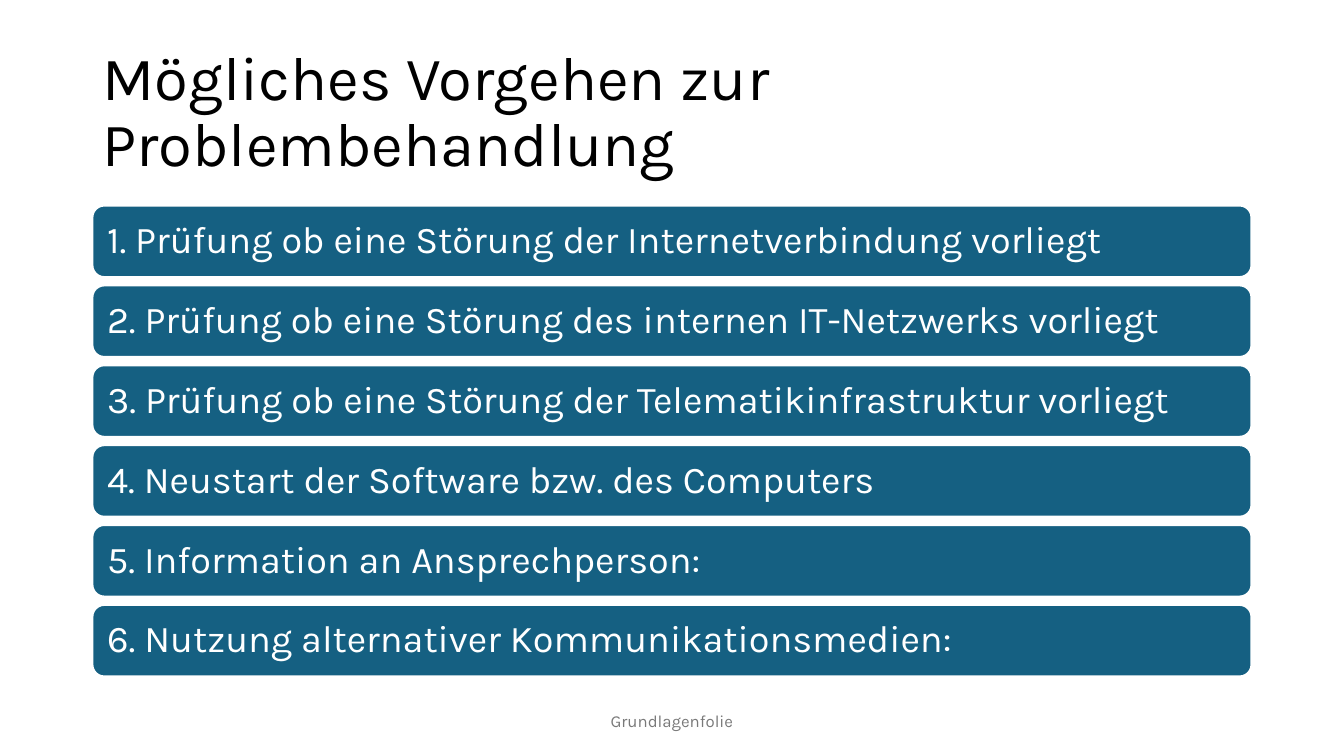
from dataclasses import dataclass

from pptx import Presentation
from pptx.dml.color import RGBColor
from pptx.enum.shapes import MSO_SHAPE as Shape
from pptx.enum.text import MSO_ANCHOR as Anchor, MSO_AUTO_SIZE as AutoSize, PP_ALIGN as Align
from pptx.util import Pt

TITLE = "Mögliches Vorgehen zur Problembehandlung"
STEPS = [
    "Prüfung ob eine Störung der Internetverbindung vorliegt",
    "Prüfung ob eine Störung des internen IT-Netzwerks vorliegt",
    "Prüfung ob eine Störung der Telematikinfrastruktur vorliegt",
    "Neustart der Software bzw. des Computers",
    "Information an Ansprechperson:",
    "Nutzung alternativer Kommunikationsmedien:",
]
FOOTER = "Grundlagenfolie"


@dataclass(frozen=True)
class Theme:
    font: str = "Karla"
    black: RGBColor = RGBColor(0x00, 0x00, 0x00)
    white: RGBColor = RGBColor(0xFF, 0xFF, 0xFF)
    blue: RGBColor = RGBColor(0x15, 0x60, 0x82)
    gray: RGBColor = RGBColor(0x79, 0x79, 0x79)
    title_size: int = 44
    step_size: int = 27
    footer_size: int = 12


THEME = Theme()
SLIDE_WIDTH, SLIDE_HEIGHT = 960, 540
MARGIN = 66
CONTENT_WIDTH = SLIDE_WIDTH - 2 * MARGIN
BAR_TOP, BAR_HEIGHT, BAR_PITCH = 146.8, 51.2, 57.05
BAR_INSET = 8
FOOTER_WIDTH = 324


def write(shape, text, size, color, align=Align.LEFT, line_spacing=1.0):
    frame = shape.text_frame
    frame.word_wrap = True
    frame.auto_size = AutoSize.NONE
    frame.vertical_anchor = Anchor.MIDDLE
    paragraph = frame.paragraphs[0]
    paragraph.alignment = align
    paragraph.line_spacing = line_spacing
    run = paragraph.add_run()
    run.text = text
    run.font.name = THEME.font
    run.font.size = Pt(size)
    run.font.color.rgb = color


def add_title(slide):
    title = slide.shapes.title
    title.left, title.top = Pt(MARGIN), Pt(28.75)
    title.width, title.height = Pt(CONTENT_WIDTH), Pt(104.4)
    write(title, TITLE, THEME.title_size, THEME.black, line_spacing=0.9)


def add_step(slide, index, step):
    bar = slide.shapes.add_shape(
        Shape.ROUNDED_RECTANGLE,
        Pt(MARGIN), Pt(BAR_TOP + index * BAR_PITCH), Pt(CONTENT_WIDTH), Pt(BAR_HEIGHT),
    )
    bar.shadow.inherit = False
    bar.fill.solid()
    bar.fill.fore_color.rgb = THEME.blue
    bar.line.color.rgb = THEME.white
    bar.line.width = Pt(1.5)
    frame = bar.text_frame
    frame.margin_left = frame.margin_right = Pt(BAR_INSET)
    frame.margin_top = frame.margin_bottom = Pt(BAR_INSET)
    write(bar, f"{index + 1}. {step}", THEME.step_size, THEME.white, line_spacing=0.9)


def add_footer(slide):
    left = (SLIDE_WIDTH - FOOTER_WIDTH) / 2
    footer = slide.shapes.add_textbox(Pt(left), Pt(500.5), Pt(FOOTER_WIDTH), Pt(28.75))
    write(footer, FOOTER, THEME.footer_size, THEME.gray, align=Align.CENTER)


def main():
    presentation = Presentation()
    presentation.slide_width = Pt(SLIDE_WIDTH)
    presentation.slide_height = Pt(SLIDE_HEIGHT)
    slide = presentation.slides.add_slide(presentation.slide_layouts.get_by_name("Title Only"))
    add_title(slide)
    for index, step in enumerate(STEPS):
        add_step(slide, index, step)
    add_footer(slide)
    presentation.save("out.pptx")


if __name__ == "__main__":
    main()
